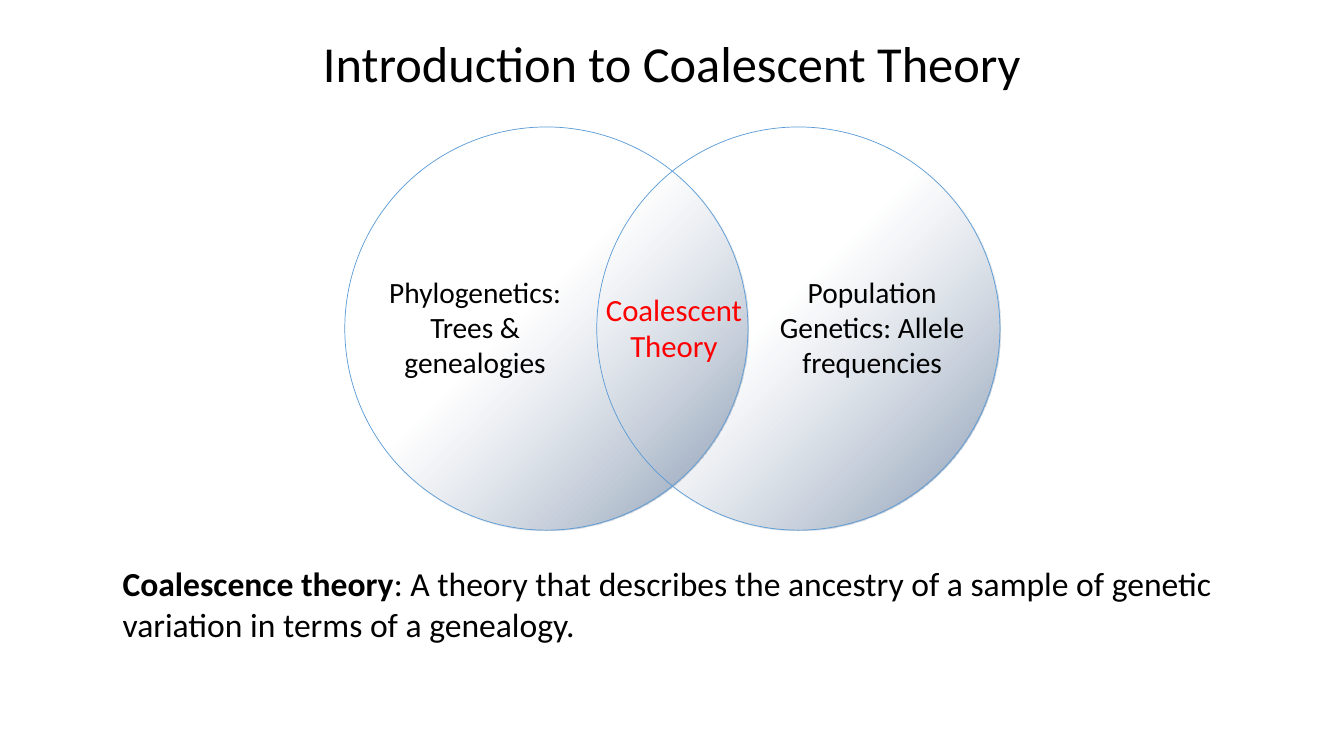
from dataclasses import dataclass

from lxml.etree import SubElement
from pptx import Presentation
from pptx.dml.color import RGBColor
from pptx.enum.shapes import MSO_SHAPE as Shape
from pptx.enum.text import MSO_ANCHOR as Anchor, MSO_AUTO_SIZE as AutoSize, PP_ALIGN as Align
from pptx.oxml.ns import qn
from pptx.util import Cm, Pt


@dataclass(frozen=True)
class Theme:
    font: str = "Calibri"
    ink: str = "000000"
    accent: str = "FF0000"
    outline: str = "5B9BD5"
    shade: str = "8497B0"
    fade: str = "ADB9CA"
    title_size: int = 36
    body_size: int = 24
    overlap_size: int = 22
    label_size: int = 21


def write(para, text, *, font, size, color, bold=False):
    span = para.add_run()
    span.text = text
    span.font.name = font
    span.font.size = Pt(size)
    span.font.bold = bold
    span.font.color.rgb = RGBColor.from_string(color)


def corner_gradient(shape, shade, fade):
    """Fill from the bottom right corner, fading to clear at 55 %."""
    shape.fill.gradient()
    gradient = shape._element.spPr.find(qn("a:gradFill"))
    for child in list(gradient):
        gradient.remove(child)
    stops = SubElement(gradient, qn("a:gsLst"))
    for position, color, opacity in ((0, shade, 100), (55, fade, 0)):
        stop = SubElement(stops, qn("a:gs"), pos=str(position * 1000))
        tint = SubElement(stop, qn("a:srgbClr"), val=color)
        if opacity < 100:
            SubElement(tint, qn("a:alpha"), val=str(opacity * 1000))
    route = SubElement(gradient, qn("a:path"))
    route.set("path", "circle")
    SubElement(route, qn("a:fillToRect"), l="100000", t="100000")


class VennSlide:
    def __init__(self, deck, theme):
        self.theme = theme
        self.page = deck.slides.add_slide(deck.slide_layouts[6])

    def text(self, left, top, width, height, paragraphs, *, size, color=None,
             align=Align.CENTER, anchor=Anchor.TOP, wrap=True, grow=False, spacing=None):
        """Add a text box; each paragraph is a list of (text, bold) spans."""
        box = self.page.shapes.add_textbox(Cm(left), Cm(top), Cm(width), Cm(height))
        frame = box.text_frame
        frame.word_wrap = wrap
        frame.auto_size = AutoSize.SHAPE_TO_FIT_TEXT if grow else AutoSize.NONE
        frame.vertical_anchor = anchor
        for index, spans in enumerate(paragraphs):
            para = frame.add_paragraph() if index else frame.paragraphs[0]
            para.alignment = align
            para.line_spacing = spacing
            for text, bold in spans:
                write(para, text, font=self.theme.font, size=size,
                      color=color or self.theme.ink, bold=bold)

    def label(self, left, top, width, height, lines, **style):
        self.text(left, top, width, height, [[(line, False)] for line in lines],
                  grow=True, **style)

    def circle(self, left, top, diameter):
        circle = self.page.shapes.add_shape(
            Shape.OVAL, Cm(left), Cm(top), Cm(diameter), Cm(diameter))
        circle.shadow.inherit = False
        corner_gradient(circle, self.theme.shade, self.theme.fade)
        circle.line.color.rgb = RGBColor.from_string(self.theme.outline)
        circle.line.width = Pt(0.5)


def main():
    deck = Presentation()
    deck.slide_width, deck.slide_height = Cm(33.87), Cm(19.05)
    theme = Theme()
    slide = VennSlide(deck, theme)

    slide.text(2.9, 0.38, 28.07, 2.11, [[("Introduction to Coalescent Theory", False)]],
               size=theme.title_size, anchor=Anchor.BOTTOM, spacing=0.9)
    definition = [
        ("Coalescence theory", True),
        (": A theory that describes the ancestry of a sample of genetic "
         "variation in terms of a genealogy.", False),
    ]
    slide.text(2.84, 14.07, 28.32, 4.24, [definition],
               size=theme.body_size, align=Align.LEFT)

    diameter, offset = 10.16, 6.35
    for index in range(2):
        slide.circle(8.69 + index * offset, 3.2, diameter)

    slide.label(9.22, 6.78, 5.51, 2.95, ["Phylogenetics: Trees & genealogies"],
                size=theme.label_size)
    slide.label(19.2, 6.78, 5.56, 2.95, ["Population", "Genetics: Allele frequencies"],
                size=theme.label_size)
    slide.label(14.99, 7.19, 3.99, 2.13, ["Coalescent", "Theory"],
                size=theme.overlap_size, color=theme.accent, wrap=False)

    deck.save("out.pptx")


if __name__ == "__main__":
    main()
